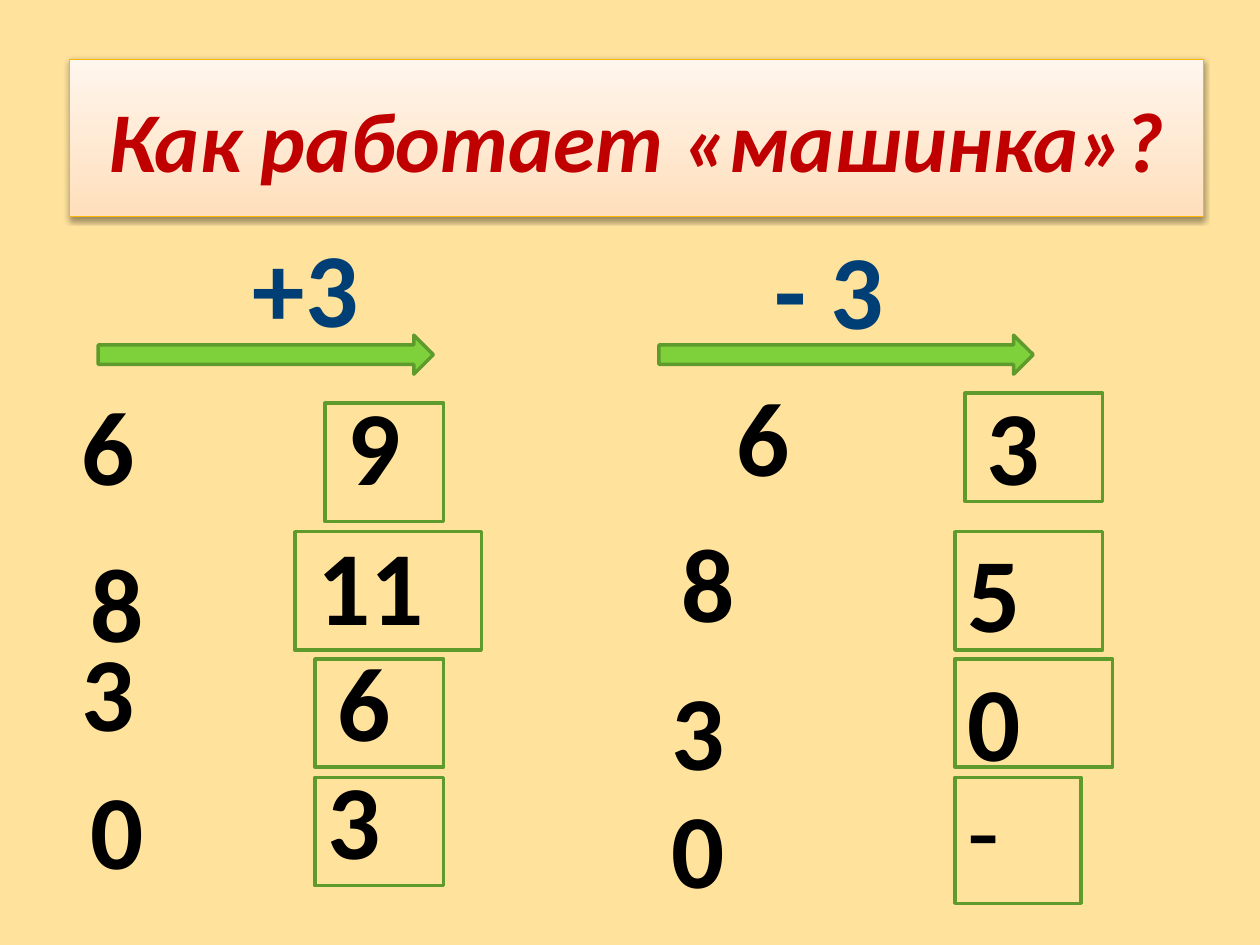
from lxml.etree import SubElement
from pptx import Presentation
from pptx.dml.color import RGBColor
from pptx.enum.shapes import MSO_SHAPE as Shape
from pptx.enum.text import MSO_ANCHOR as Anchor, PP_ALIGN as Align
from pptx.oxml.ns import qn
from pptx.util import Inches, Pt

SAND = RGBColor(0xFF, 0xE3, 0x9D)
PEACH = RGBColor(0xFF, 0xDF, 0xBC)
CREAM = RGBColor(0xFF, 0xF6, 0xED)
AMBER = RGBColor(0xFE, 0xB6, 0x04)
RED = RGBColor(0xC0, 0x00, 0x00)
NAVY = RGBColor(0x00, 0x3F, 0x75)
BLACK = RGBColor(0x00, 0x00, 0x00)
LIME = RGBColor(0x7F, 0xD1, 0x3B)
GREEN = RGBColor(0x5E, 0x9B, 0x2C)

TITLE = {"size": Pt(48.6), "bold": True, "italic": True}
NUMBER = {"size": Pt(60), "bold": True}
DASH = {"size": Pt(60), "bold": False}

ADDITION = {
    "rule": (" +3", (1.72, 1.72, 1.95, 1.11)),
    "arrow": (0.78, 2.66, 2.66, 0.31),
    "inputs": [("6", 0.55, 2.97), ("8", 0.62, 4.22), ("3", 0.55, 4.92), ("0", 0.62, 6.02)],
    "answers": [("9", 2.66, 2.97), ("11", 2.42, 4.08), ("6", 2.58, 5), ("3", 2.5, 5.94)],
    "frames": [(2.58, 3.2, 0.94, 0.94), (2.34, 4.22, 1.48, 0.94),
               (2.5, 5.23, 1.02, 0.86), (2.5, 6.17, 1.02, 0.86)],
}
SUBTRACTION = {
    "rule": ("- 3", (6.05, 1.73, 1.95, 1.11)),
    "arrow": (5.23, 2.66, 2.97, 0.31),
    "inputs": [("6", 5.75, 2.9), ("8", 5.31, 4.06), ("3", 5.23, 5.23), ("0", 5.23, 6.17)],
    "answers": [("3", 7.73, 2.97), ("5", 7.58, 4.14), ("0", 7.58, 5.16), ("-", 7.58, 6.02)],
    "frames": [(7.66, 3.12, 1.09, 0.86), (7.58, 4.22, 1.17, 0.94),
               (7.58, 5.23, 1.25, 0.86), (7.58, 6.17, 1, 1)],
}


def write(frame, text, color, style):
    """Write one formatted line into a text frame."""
    frame.word_wrap = True
    span = frame.paragraphs[0].add_run()
    span.text = text
    span.font.name = "Calibri"
    span.font.color.rgb = color
    for name, value in style.items():
        setattr(span.font, name, value)


def add_text(page, box, text, color=BLACK, style=NUMBER):
    """Place a text box holding one line."""
    label = page.shapes.add_textbox(*map(Inches, box))
    write(label.text_frame, text, color, style)


def add_outline(page, kind, box, fill=None, line=GREEN, width=2):
    """Place a preset shape with a coloured outline."""
    shape = page.shapes.add_shape(kind, *map(Inches, box))
    shape.shadow.inherit = False
    shape.line.color.rgb = line
    shape.line.width = Pt(width)
    if fill is None:
        shape.fill.background()
    else:
        shape.fill.solid()
        shape.fill.fore_color.rgb = fill
    return shape


def add_title(page, box, text):
    """Place the shaded title banner with its soft shadow."""
    banner = add_outline(page, Shape.RECTANGLE, box, CREAM, AMBER, 0.75)
    banner.fill.gradient()
    banner.fill.gradient_angle = 90
    for stop, color in zip(banner.fill.gradient_stops, (PEACH, CREAM)):
        stop.color.rgb = color
    effects = banner._element.spPr.find(qn("a:effectLst"))
    shadow = SubElement(effects, qn("a:outerShdw"), blurRad=str(Pt(3.1)),
                        dist=str(Pt(1.6)), dir="5400000", rotWithShape="0")
    black = SubElement(shadow, qn("a:srgbClr"), val="000000")
    SubElement(black, qn("a:alpha"), val="38000")
    banner.text_frame.vertical_anchor = Anchor.MIDDLE
    write(banner.text_frame, text, RED, TITLE)
    banner.text_frame.paragraphs[0].alignment = Align.CENTER


def add_machine(page, machine):
    """Place one machine: its rule, arrow, inputs and framed answers."""
    rule, rule_box = machine["rule"]
    add_text(page, rule_box, rule, NAVY)
    add_outline(page, Shape.RIGHT_ARROW, machine["arrow"], LIME)
    for text, left, top in machine["inputs"] + machine["answers"]:
        add_text(page, (left, top, 1.25, 1.11), text, style=DASH if text == "-" else NUMBER)
    for box in machine["frames"]:
        add_outline(page, Shape.RECTANGLE, box)


def main():
    """Build the slide and save the deck."""
    deck = Presentation()
    deck.slide_width, deck.slide_height = Inches(10), Inches(7.5)
    page = deck.slides.add_slide(deck.slide_layouts[6])
    page.background.fill.solid()
    page.background.fill.fore_color.rgb = SAND
    add_title(page, (0.55, 0.47, 9, 1.25), "Как работает «машинка»?")
    for machine in (ADDITION, SUBTRACTION):
        add_machine(page, machine)
    deck.save("out.pptx")


if __name__ == "__main__":
    main()
